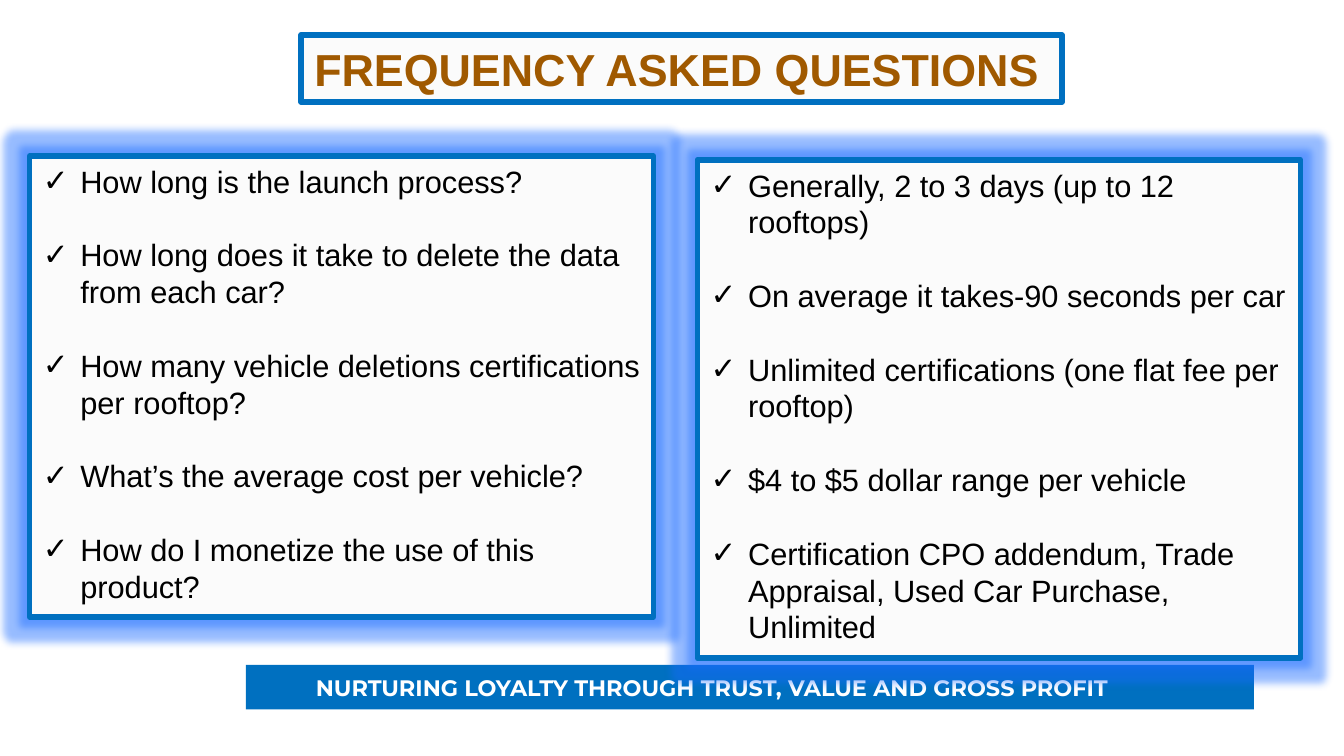
"""Build a slide that sets frequent questions beside their answers."""

from dataclasses import dataclass

from lxml.etree import SubElement
from pptx import Presentation
from pptx.dml.color import RGBColor
from pptx.enum.shapes import MSO_SHAPE as Shape
from pptx.enum.text import MSO_ANCHOR as Anchor, PP_ALIGN as Align
from pptx.oxml.ns import qn
from pptx.util import Cm, Pt


@dataclass(frozen=True)
class Theme:
    blue: str = "0070C0"
    panel: str = "FBFBFB"
    brown: str = "A05900"
    black: str = "000000"
    white: str = "FFFFFF"
    glow: str = "1A6BFF"
    glow_alpha: int = 45000
    glow_radius: int = Pt(8)
    border: float = 3
    title_size: float = 24
    body_size: float = 16.5
    slogan_size: float = 12
    line_pitch: float = 19.72
    body_font: str = "Arial"
    slogan_font: str = "Montserrat"


@dataclass(frozen=True)
class Box:
    left: float
    top: float
    width: float
    height: float


@dataclass(frozen=True)
class Panel:
    box: Box
    items: tuple[str, ...]


THEME = Theme()
TITLE = Box(5.69, 0.66, 14.38, 1.27)
SLOGAN = Box(4.65, 12.57, 19.05, 0.84)
QUESTIONS = Panel(Box(0.56, 2.95, 11.79, 8.71), (
    "How long is the launch process?",
    "How long does it take to delete the data from each car?",
    "How many vehicle deletions certifications per rooftop?",
    "What’s the average cost per vehicle?",
    "How do I monetize the use of this product?",
))
ANSWERS = Panel(Box(13.18, 3.02, 11.4, 9.42), (
    "Generally, 2 to 3 days (up to 12 rooftops)",
    "On average it takes-90 seconds per car",
    "Unlimited certifications (one flat fee per rooftop)",
    "$4 to $5 dollar range per vehicle",
    "Certification CPO addendum, Trade Appraisal, Used Car Purchase, Unlimited",
))


def draw_box(slide, box: Box, fill: str, bordered: bool = True):
    """Draw a flat rectangle, with the blue border if wanted."""
    rect = slide.shapes.add_shape(
        Shape.RECTANGLE, Cm(box.left), Cm(box.top), Cm(box.width), Cm(box.height))
    rect.shadow.inherit = False
    rect.fill.solid()
    rect.fill.fore_color.rgb = RGBColor.from_string(fill)
    if bordered:
        rect.line.color.rgb = RGBColor.from_string(THEME.blue)
        rect.line.width = Pt(THEME.border)
    else:
        rect.line.fill.background()
    return rect


def add_glow(rect) -> None:
    """Surround a rectangle with a soft blue glow."""
    effects = rect._element.spPr.find(qn("a:effectLst"))
    glow = SubElement(effects, qn("a:glow"), rad=str(THEME.glow_radius))
    tint = SubElement(glow, qn("a:srgbClr"), val=THEME.glow)
    SubElement(tint, qn("a:alpha"), val=str(THEME.glow_alpha))


def add_check(paragraph) -> None:
    """Give a paragraph a black check mark and a hanging indent."""
    props = paragraph._p.get_or_add_pPr()
    props.set("marL", str(Cm(0.71)))
    props.set("indent", str(-Cm(0.71)))
    tint = SubElement(props, qn("a:buClr"))
    SubElement(tint, qn("a:srgbClr"), val=THEME.black)
    SubElement(props, qn("a:buFont"), typeface=THEME.body_font)
    SubElement(props, qn("a:buChar"), char="✓")


def write(rect, *lines: str, size: float, color: str, font: str = THEME.body_font,
          bold: bool = False, checked: bool = False, pitch: float | None = None,
          anchor=Anchor.MIDDLE, margin_left: float = 0.25) -> None:
    """Write one paragraph per line, a blank line's height apart if pitch is set."""
    frame = rect.text_frame
    frame.word_wrap = True
    frame.vertical_anchor = anchor
    frame.margin_left = Cm(margin_left)
    for index, line in enumerate(lines):
        paragraph = frame.add_paragraph() if index else frame.paragraphs[0]
        paragraph.alignment = Align.LEFT
        if checked:
            add_check(paragraph)
        if pitch:
            paragraph.line_spacing = Pt(pitch)
            paragraph.space_before = Pt(pitch if index else 0)
        run = paragraph.add_run()
        run.text = line
        run.font.name = font
        run.font.size = Pt(size)
        run.font.bold = bold
        run.font.color.rgb = RGBColor.from_string(color)


def draw_panel(slide, panel: Panel) -> None:
    """Draw a glowing panel with its checked list."""
    rect = draw_box(slide, panel.box, THEME.panel)
    add_glow(rect)
    write(rect, *panel.items, size=THEME.body_size, color=THEME.black,
          checked=True, pitch=THEME.line_pitch, anchor=Anchor.TOP)


def main() -> None:
    """Assemble and save the slide."""
    deck = Presentation()
    deck.slide_width, deck.slide_height = Cm(25.4), Cm(14.29)
    slide = deck.slides.add_slide(deck.slide_layouts[6])
    draw_panel(slide, QUESTIONS)
    write(draw_box(slide, TITLE, THEME.panel), "FREQUENCY ASKED QUESTIONS",
          size=THEME.title_size, color=THEME.brown, bold=True)
    write(draw_box(slide, SLOGAN, THEME.blue, bordered=False),
          "NURTURING LOYALTY THROUGH TRUST, VALUE AND GROSS PROFIT",
          size=THEME.slogan_size, color=THEME.white, font=THEME.slogan_font,
          bold=True, margin_left=1.32)
    draw_panel(slide, ANSWERS)
    deck.save("out.pptx")


if __name__ == "__main__":
    main()
